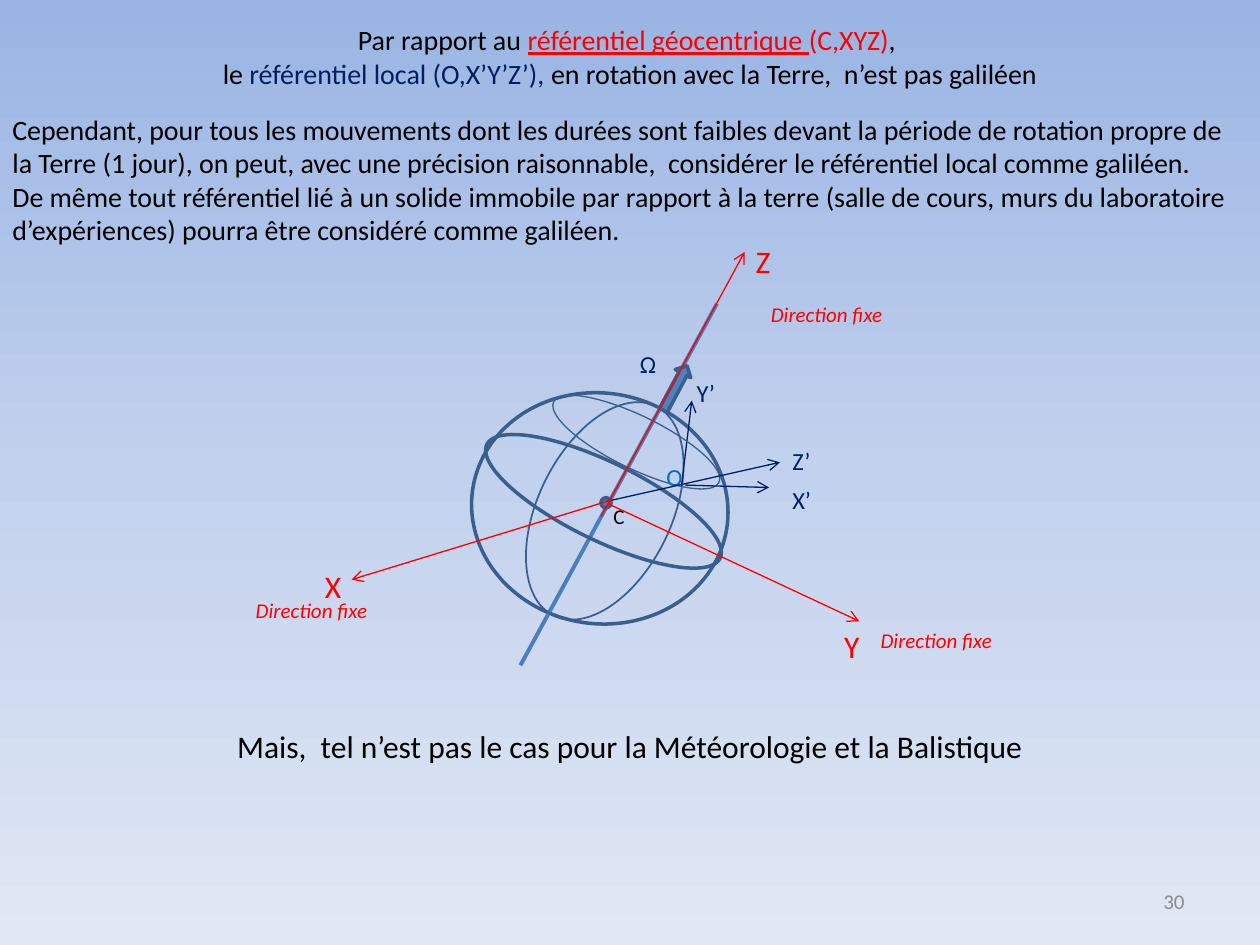
import copy
from dataclasses import dataclass

import pptx
import pptx.dml.color
import pptx.enum.shapes
import pptx.enum.text
import pptx.oxml.ns
import pptx.oxml.xmlchemy
import pptx.util

Pt = pptx.util.Pt
qn = pptx.oxml.ns.qn
new_element = pptx.oxml.xmlchemy.OxmlElement
ALIGN = pptx.enum.text.PP_ALIGN
ANCHOR = pptx.enum.text.MSO_ANCHOR
SHAPE = pptx.enum.shapes.MSO_SHAPE

BLACK, RED, NAVY, GREY = "000000", "FF0000", "002060", "8C8C8C"
OUTLINE, SOLID, AXIS = "3A5F8C", "4F81BD", "4B7EBC"


@dataclass
class Span:
    text: str
    color: str = BLACK
    underline: bool = False


@dataclass
class Solid:
    kind: int
    box: tuple
    rotation: float = 0
    weight: float = 2
    fill: str | None = None


@dataclass
class Line:
    start: tuple
    end: tuple
    color: str
    weight: float = 0.75
    arrow: bool = True


@dataclass
class Label:
    text: str
    box: tuple
    color: str = NAVY
    size: float = 14
    italic: bool = False
    rotation: float = 0


def rgb(value: str):
    return pptx.dml.color.RGBColor.from_string(value)


def place(shape, box: tuple) -> None:
    shape.left, shape.top, shape.width, shape.height = map(Pt, box)


def write_text(frame, paragraphs, *, size, color=BLACK, align=ALIGN.LEFT,
               anchor=ANCHOR.TOP, italic=False, wrap=True) -> None:
    """Each paragraph is a plain string or a list of spans."""
    frame.auto_size = pptx.enum.text.MSO_AUTO_SIZE.NONE
    frame.word_wrap = wrap
    frame.vertical_anchor = anchor
    for number, content in enumerate(paragraphs):
        paragraph = frame.add_paragraph() if number else frame.paragraphs[0]
        paragraph.alignment = align
        spans = [Span(content, color)] if isinstance(content, str) else content
        for span in spans:
            run = paragraph.add_run()
            run.text = span.text
            run.font.name = "Calibri"
            run.font.size = Pt(size)
            run.font.italic = italic
            run.font.underline = span.underline
            run.font.color.rgb = rgb(span.color)


def add_text(slide, box: tuple, paragraphs, **text_format):
    shape = slide.shapes.add_textbox(*map(Pt, box))
    write_text(shape.text_frame, paragraphs, **text_format)
    return shape


def draw_solid(slide, solid: Solid) -> None:
    shape = slide.shapes.add_shape(solid.kind, *map(Pt, solid.box))
    shape.rotation = solid.rotation
    shape.shadow.inherit = False
    shape.line.color.rgb = rgb(OUTLINE)
    shape.line.width = Pt(solid.weight)
    if solid.fill:
        shape.fill.solid()
        shape.fill.fore_color.rgb = rgb(solid.fill)
    else:
        shape.fill.background()


def draw_line(slide, line: Line) -> None:
    connector = slide.shapes.add_connector(
        pptx.enum.shapes.MSO_CONNECTOR.STRAIGHT, *map(Pt, line.start + line.end))
    connector.line.color.rgb = rgb(line.color)
    connector.line.width = Pt(line.weight)
    properties = connector.element.spPr
    if line.arrow:
        tail = new_element("a:tailEnd")
        tail.set("type", "arrow")
        properties.find(qn("a:ln")).append(tail)
    properties.append(new_element("a:effectLst"))


def draw_label(slide, label: Label) -> None:
    shape = add_text(slide, label.box, [label.text], size=label.size,
                     color=label.color, italic=label.italic, wrap=False)
    shape.rotation = label.rotation


def paint_background(slide, stops: list) -> None:
    fill = slide.background.fill
    fill.gradient()
    fill.gradient_angle = 270
    stop_list = slide.element.find(".//" + qn("a:gsLst"))
    stop_list.append(copy.deepcopy(stop_list[-1]))
    for stop, (position, color) in zip(fill.gradient_stops, stops):
        stop.position = position
        stop.color.rgb = rgb(color)


def fixed_direction(left: float, top: float) -> Label:
    return Label("Direction fixe", (left, top, 79, 21.8), RED, 12, italic=True)


# Drawing, from back to front
GLOBE = [
    Solid(SHAPE.OVAL, (269.3, 224.6, 146.9, 131.8), 9),
    Line((409.7, 173.5), (297.4, 380.2), AXIS, 2.25, arrow=False),
    Solid(SHAPE.OVAL, (270.7, 264.2, 148.3, 44.6), 26),
    Solid(SHAPE.OVAL, (307.4, 225.4, 76.3, 133.2), 26, 1),
]
LOCAL_FRAME = [
    Line((389.5, 277.2), (395.3, 229), NAVY),
    Label("Y’", (391, 212.4, 25.2, 24.5)),
    Solid(SHAPE.OVAL, (343.4, 284.4, 5.8, 5.8), fill=SOLID),
    Label("C", (343.4, 284.4, 22.3, 21.6), BLACK, 12),
    Solid(SHAPE.OVAL, (311, 237.6, 105.1, 30.2), 26, 0.75),
    Line((391.7, 277.2), (439.5, 278.6), NAVY),
    Label("O", (373.7, 260.6, 23.8, 24.5), "0070C0"),
    Label("X’", (445.7, 273.6, 25.2, 24.5)),
    Line((346.3, 286.6), (445.7, 264.2), NAVY),
    Label("Z’", (445.7, 251.3, 25.2, 24.5)),
]
ROTATION_VECTOR = [
    Solid(SHAPE.RIGHT_ARROW, (371.5, 216.7, 28.8, 10.1), 298, fill=SOLID),
    Label("Ω", (358.6, 195.8, 26.6, 23.8)),
]
GEOCENTRIC_FRAME = [
    Line((343.4, 295.2), (425.5, 144), RED),
    Label("Z", (424.8, 134.6, 23, 28.8), RED, 18, rotation=1),
    Line((347.8, 288), (491, 355), RED),
    Label("Y", (475.2, 355, 23, 28.8), RED, 18),
    Line((349.2, 285.8), (200.9, 331.2), RED),
    Label("X", (178.6, 320.4, 23.8, 28.8), RED, 18),
    fixed_direction(433.4, 168.5),
    fixed_direction(496.1, 355),
    fixed_direction(139, 337.7),
]
DRAW = {Solid: draw_solid, Line: draw_line, Label: draw_label}


def main() -> None:
    deck = pptx.Presentation()
    deck.slide_width, deck.slide_height = Pt(720), Pt(540)
    slide = deck.slides.add_slide(deck.slide_layouts.get_by_name("Title Only"))
    paint_background(slide, [(0, "9AB5E4"), (0.5, "C2D1ED"), (1, "E1E8F5")])

    # Title
    heading = slide.shapes.title
    place(heading, (0, 9.4, 720, 46))
    write_text(heading.text_frame, [
        [Span("Par rapport au "), Span("référentiel géocentrique ", RED, True),
         Span("(C,XYZ)", RED), Span(", ")],
        [Span("le "), Span("référentiel local (O,X’Y’Z’), ", NAVY),
         Span("en rotation avec la Terre,  n’est pas galiléen")],
    ], size=16, align=ALIGN.CENTER)

    # Globe with its frames of reference
    for part in GLOBE + LOCAL_FRAME + ROTATION_VECTOR + GEOCENTRIC_FRAME:
        DRAW[type(part)](slide, part)

    # Explanation, conclusion and slide number
    add_text(slide, (0, 60.5, 720, 85), [
        "Cependant, pour tous les mouvements dont les durées sont faibles devant "
        "la période de rotation propre de la Terre (1 jour), on peut, avec une "
        "précision raisonnable,  considérer le référentiel local comme galiléen.",
        "De même tout référentiel lié à un solide immobile par rapport à la terre "
        "(salle de cours, murs du laboratoire d’expériences) pourra être considéré "
        "comme galiléen.",
    ], size=16)
    add_text(slide, (0, 411.8, 720, 28.8),
             ["Mais,  tel n’est pas le cas pour la Météorologie et la Balistique"],
             size=18, align=ALIGN.CENTER)
    add_text(slide, (516, 500.5, 168, 28.8), ["30"], size=12, color=GREY,
             align=ALIGN.RIGHT, anchor=ANCHOR.MIDDLE)

    deck.save("out.pptx")


if __name__ == "__main__":
    main()
